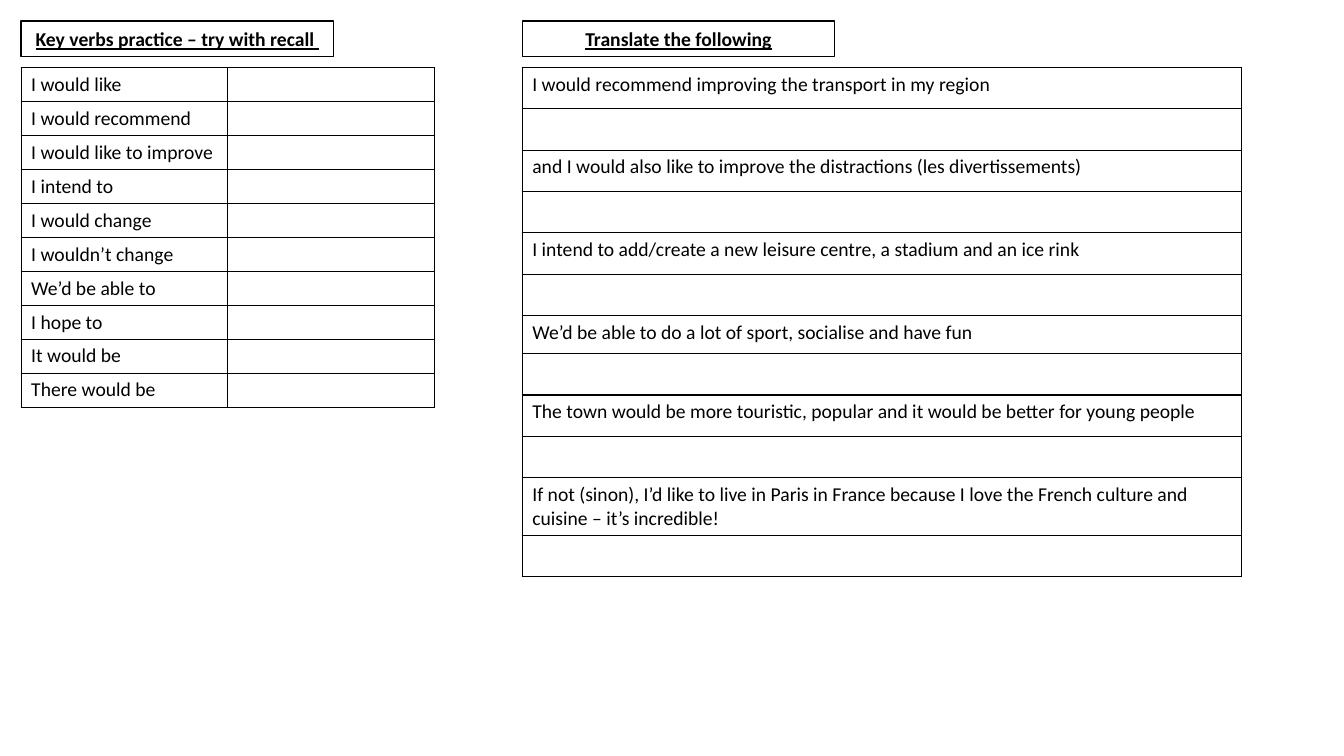
from pptx import Presentation
from pptx.dml.color import RGBColor as RGB
from pptx.enum.shapes import MSO_SHAPE as Shape
from pptx.enum.text import MSO_ANCHOR as Anchor, PP_ALIGN as Align
from pptx.oxml.ns import qn
from pptx.util import Inches, Pt
from lxml.etree import SubElement as Sub

BLACK, WHITE = "000000", "FFFFFF"
SIZE = 14
VERBS = [
    "I would like", "I would recommend", "I would like to improve",
    "I intend to", "I would change", "I wouldn’t change",
    "We’d be able to", "I hope to", "It would be", "There would be",
]
LINES = [
    "I would recommend improving the transport in my region",
    "and I would also like to improve the distractions (les divertissements)",
    "I intend to add/create a new leisure centre, a stadium and an ice rink",
    "We’d be able to do a lot of sport, socialise and have fun",
    "The town would be more touristic, popular and it would be better "
    "for young people",
    "If not (sinon), I’d like to live in Paris in France because I love "
    "the French culture and cuisine – it’s incredible!",
]


def paint(target, color):
    target.solid()
    target.fore_color.rgb = RGB.from_string(color)


def write(frame, text, bold=False, line=False, align=Align.LEFT):
    frame.word_wrap = True
    para = frame.paragraphs[0]
    para.alignment = align
    if not text:
        Sub(para._p, qn("a:endParaRPr"), sz=str(SIZE * 100))
        return
    run = para.add_run()
    run.text = text
    font = run.font
    font.name, font.size = "Calibri", Pt(SIZE)
    font.bold, font.underline = bold, line
    paint(font.fill, BLACK)


def edge(cell):
    """Rule all four sides of a cell in black."""
    props = cell._tc.get_or_add_tcPr()
    for side in ("lnL", "lnR", "lnT", "lnB"):
        rule = Sub(props, qn(f"a:{side}"), w=str(Pt(1)))
        Sub(Sub(rule, qn("a:solidFill")), qn("a:srgbClr"), val=BLACK)


def head(slide, left, top, text):
    box = slide.shapes.add_shape(
        Shape.RECTANGLE, Inches(left), Inches(top), Inches(3.1), Inches(0.35))
    box.shadow.inherit = False
    paint(box.fill, WHITE)
    paint(box.line.fill, BLACK)
    box.line.width = Pt(1)
    box.text_frame.vertical_anchor = Anchor.MIDDLE
    write(box.text_frame, text, bold=True, line=True, align=Align.CENTER)


def grid(slide, left, top, width, rows, highs):
    cols = len(rows[0])
    table = slide.shapes.add_table(
        len(rows), cols, Inches(left), Inches(top),
        Inches(width), Inches(sum(highs))).table
    table.first_row = table.horz_banding = False
    for col in table.columns:
        col.width = Inches(width / cols)
    for row, texts, high in zip(table.rows, rows, highs):
        row.height = Inches(high)
        for cell, text in zip(row.cells, texts):
            edge(cell)
            cell.fill.background()
            write(cell.text_frame, text)


def panel(slide, left, top, width, title, rows, highs):
    """Place a boxed heading with its answer table below."""
    head(slide, left, top, title)
    grid(slide, left, top + 0.46, width, rows, highs)


def main():
    deck = Presentation()
    deck.slide_width, deck.slide_height = Inches(13.33), Inches(7.5)
    slide = deck.slides.add_slide(deck.slide_layouts[6])
    verbs = [(verb, "") for verb in VERBS]
    panel(slide, 0.21, 0.21, 4.1, "Key verbs practice – try with recall ",
          verbs, [0.33] * len(verbs))
    lines = [(text,) for line in LINES for text in (line, "")]
    highs = [0.41] * len(lines)
    highs[6] = 0.38
    panel(slide, 5.18, 0.21, 7.13, "Translate the following", lines, highs)
    deck.save("out.pptx")


if __name__ == "__main__":
    main()
